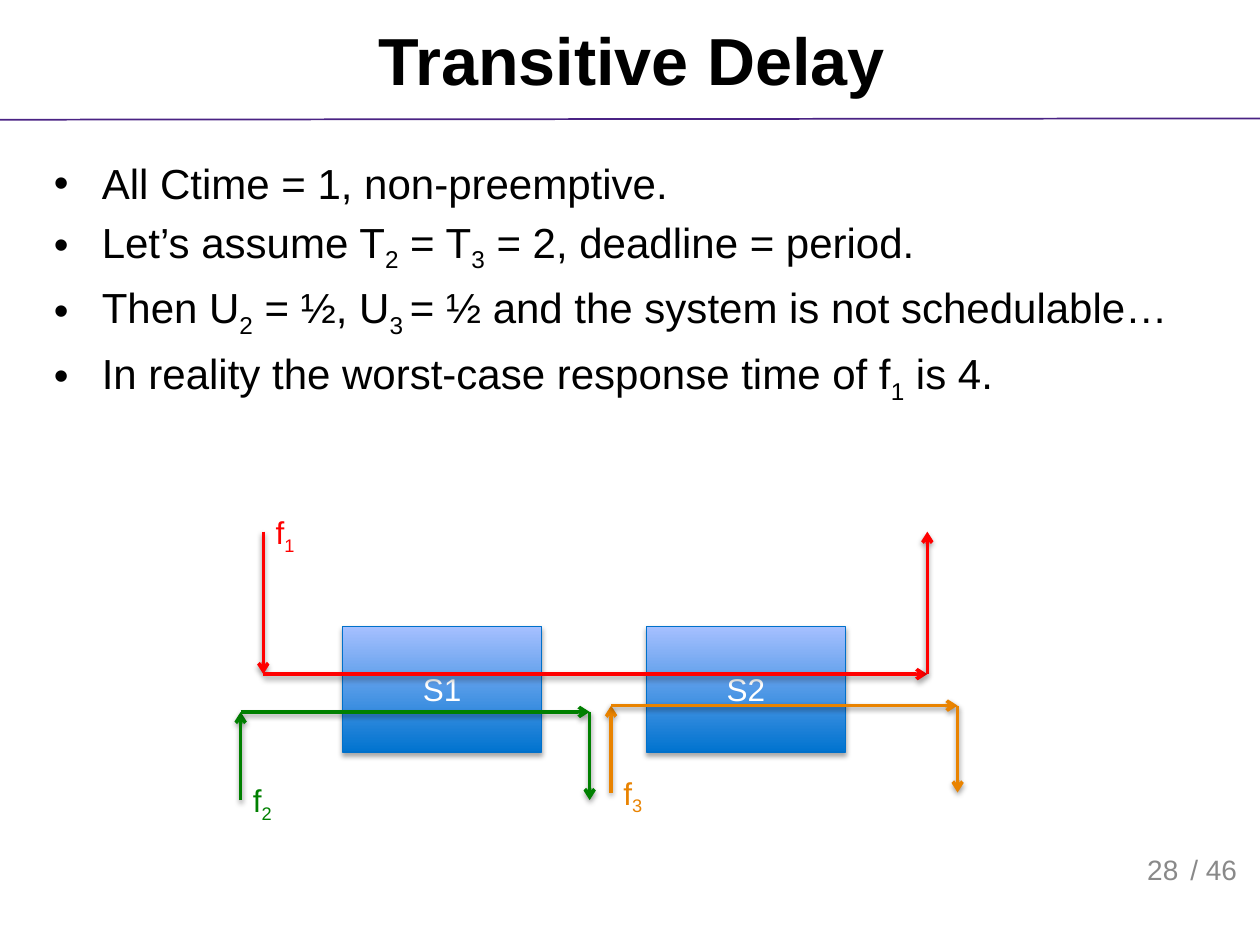
import pptx
import pptx.dml.color
import pptx.enum.shapes
import pptx.enum.text
import pptx.oxml
import pptx.oxml.ns
import pptx.util
from pptx.dml.color import RGBColor
from pptx.enum.text import MSO_ANCHOR, PP_ALIGN
from pptx.util import Inches

BLACK = RGBColor(0x00, 0x00, 0x00)
WHITE = RGBColor(0xFF, 0xFF, 0xFF)
GRAY = RGBColor(0x89, 0x89, 0x89)
PURPLE = RGBColor(0x4A, 0x23, 0x84)
RED = RGBColor(0xFF, 0x00, 0x00)
GREEN = RGBColor(0x00, 0x80, 0x00)
ORANGE = RGBColor(0xE9, 0x83, 0x00)
BOX_DARK = RGBColor(0x00, 0x73, 0xCF)
BOX_LIGHT = RGBColor(0xA6, 0xC0, 0xFF)
BOX_LINE = RGBColor(0x00, 0x70, 0xCA)


class SlideBuilder:
    font_name = "Arial"
    flow_width = 2
    indent = 0.38

    def __init__(self, slide):
        self.slide = slide

    def add_runs(self, paragraph, text, size, color, bold=False):
        """Fill a paragraph; every second part between bars is a subscript."""
        for index, part in enumerate(text.split("|")):
            run = paragraph.add_run()
            run.text = part
            run.font.name = self.font_name
            run.font.size = pptx.util.Pt(size)
            run.font.color.rgb = color
            run.font.bold = bold
            if index % 2:
                run._r.get_or_add_rPr().set("baseline", "-25000")

    def text(self, box, text, size, color, align=PP_ALIGN.LEFT,
             anchor=MSO_ANCHOR.TOP, bold=False, wrap=True):
        shape = self.slide.shapes.add_textbox(*map(Inches, box))
        frame = shape.text_frame
        frame.word_wrap = wrap
        frame.vertical_anchor = anchor
        paragraph = frame.paragraphs[0]
        paragraph.alignment = align
        self.add_runs(paragraph, text, size, color, bold)

    def bullets(self, box, lines, size, color):
        frame = self.slide.shapes.add_textbox(*map(Inches, box)).text_frame
        frame.word_wrap = True
        for index, line in enumerate(lines):
            paragraph = frame.add_paragraph() if index else frame.paragraphs[0]
            if index:
                paragraph.space_before = pptx.util.Pt(size * 0.2)
            properties = paragraph._p.get_or_add_pPr()
            properties.set("marL", str(Inches(self.indent)))
            properties.set("indent", str(-Inches(self.indent)))
            self.add_xml(properties, '<a:buFont {ns} typeface="Arial"/>')
            self.add_xml(properties, '<a:buChar {ns} char="•"/>')
            self.add_runs(paragraph, line, size, color)

    def station(self, box, name):
        shape = self.slide.shapes.add_shape(
            pptx.enum.shapes.MSO_SHAPE.RECTANGLE, *map(Inches, box))
        shape.fill.gradient()
        shape.fill.gradient_angle = 90
        for stop, position, color in zip(shape.fill.gradient_stops, (0, 1),
                                         (BOX_DARK, BOX_LIGHT)):
            stop.position = position
            stop.color.rgb = color
        shape.line.color.rgb = BOX_LINE
        shape.line.width = pptx.util.Pt(0.75)
        self.add_shadow(shape, 35, 1.8)
        shape.text_frame.vertical_anchor = MSO_ANCHOR.MIDDLE
        paragraph = shape.text_frame.paragraphs[0]
        paragraph.alignment = PP_ALIGN.CENTER
        self.add_runs(paragraph, name, 18, WHITE)

    def line(self, start, end, color, width):
        connector = self.slide.shapes.add_connector(
            pptx.enum.shapes.MSO_CONNECTOR.STRAIGHT,
            *map(Inches, (*start, *end)))
        connector.line.color.rgb = color
        connector.line.width = pptx.util.Pt(width)
        return connector

    def rule(self, start, end, color):
        connector = self.line(start, end, color, 1)
        self.add_xml(connector._element.spPr, "<a:effectLst {ns}/>")

    def arrow(self, start, end, color):
        connector = self.line(start, end, color, self.flow_width)
        self.add_xml(connector.line._get_or_add_ln(),
                     '<a:tailEnd {ns} type="arrow"/>')
        self.add_shadow(connector, 38, 1.6)

    def flow(self, name, points, color):
        """Draw arrows from point to point, labelled beside the first one."""
        for start, end in zip(points, points[1:]):
            self.arrow(start, end, color)
        left, top = points[0]
        self.text((left, top - 0.2, 0.37, 0.4), name, 18, color, wrap=False)

    def add_shadow(self, shape, opacity, distance):
        self.add_xml(
            shape._element.spPr,
            "<a:effectLst {ns}>"
            f'<a:outerShdw blurRad="{pptx.util.Pt(3.1)}" '
            f'dist="{pptx.util.Pt(distance)}" dir="5400000" rotWithShape="0">'
            f'<a:srgbClr val="{BLACK}"><a:alpha val="{opacity * 1000}"/>'
            "</a:srgbClr></a:outerShdw></a:effectLst>")

    def add_xml(self, parent, xml):
        namespace = pptx.oxml.ns.nsdecls("a")
        parent.append(pptx.oxml.parse_xml(xml.replace("{ns}", namespace)))


def main():
    presentation = pptx.Presentation()
    presentation.slide_width = Inches(10)
    presentation.slide_height = Inches(7.5)
    slide = presentation.slides.add_slide(presentation.slide_layouts[6])
    builder = SlideBuilder(slide)

    builder.rule((0, 0.95), (10, 0.94), PURPLE)
    builder.text((9.35, 6.68, 1.06, 0.4), "/ 46", 16, GRAY,
                 anchor=MSO_ANCHOR.BOTTOM)
    builder.text((0.33, 0, 9.37, 0.94), "Transitive Delay", 38, BLACK,
                 PP_ALIGN.CENTER, MSO_ANCHOR.MIDDLE, bold=True)
    builder.bullets((0.33, 1.2, 9.37, 2.23), [
        "All Ctime = 1, non-preemptive.",
        "Let’s assume T|2| = T|3| = 2, deadline = period.",
        "Then U|2| = ½, U|3 |= ½ and the system is not schedulable…",
        "In reality the worst-case response time of f|1| is 4.",
    ], 24, BLACK)
    builder.text((8.39, 6.68, 1.06, 0.4), "28", 16, GRAY,
                 PP_ALIGN.RIGHT, MSO_ANCHOR.BOTTOM)

    for left, name in ((2.72, "S1"), (5.13, "S2")):
        builder.station((left, 4.97, 1.58, 1), name)

    flows = [
        ("f|1", RED, 2.09, 7.36, 5.35, 4.22),
        ("f|2", GREEN, 1.91, 4.68, 5.65, 6.35),
        ("f|3", ORANGE, 4.85, 7.6, 5.6, 6.29),
    ]
    for name, color, left, right, level, outside in flows:
        points = [(left, outside), (left, level),
                  (right, level), (right, outside)]
        builder.flow(name, points, color)

    presentation.save("out.pptx")


if __name__ == "__main__":
    main()
